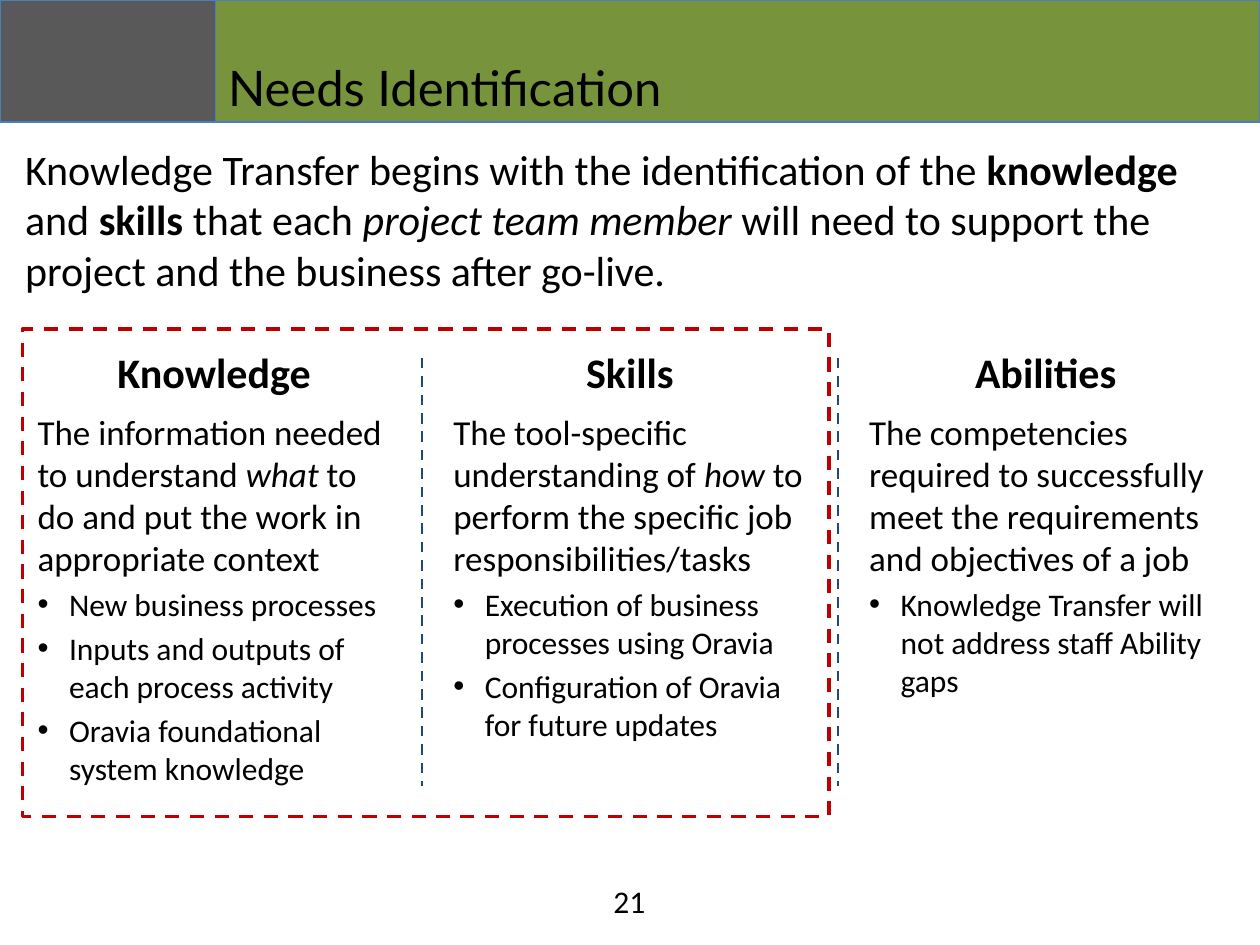
from dataclasses import dataclass

from lxml.etree import SubElement
from pptx import Presentation
from pptx.dml.color import RGBColor
from pptx.enum.dml import MSO_LINE_DASH_STYLE as Dash
from pptx.enum.shapes import MSO_CONNECTOR, MSO_SHAPE
from pptx.enum.text import MSO_ANCHOR as Anchor, PP_ALIGN as Align
from pptx.oxml.ns import qn
from pptx.util import Inches, Pt


@dataclass(frozen=True)
class Theme:
    text: str = "000000"
    tab: str = "595959"
    band: str = "77933C"
    band_line: str = "4B7EBC"
    frame: str = "C00000"
    divider: str = "1F497D"
    title_font: str = "Lato"
    body_font: str = "Calibri"
    title: int = 28
    lead: int = 24
    body: int = 20
    bullet: int = 18


THEME = Theme()
BOLD, ITALIC = {"bold": True}, {"italic": True}

TITLE = "Needs Identification"
PAGE_NUMBER = "21"
INTRO = [
    ("Knowledge Transfer begins with the identification of the ", {}),
    ("knowledge", BOLD),
    (" and ", {}),
    ("skills", BOLD),
    (" that each ", {}),
    ("project team member ", ITALIC),
    ("will need to support the project and the business after go-live.", {}),
]
COLUMNS = [
    {
        "heading": "Knowledge",
        "meaning": [
            ("The information needed to understand ", {}),
            ("what", ITALIC),
            (" to do and put the work in appropriate context", {}),
        ],
        "bullets": [
            "New business processes",
            "Inputs and outputs of each process activity",
            "Oravia foundational system knowledge",
        ],
    },
    {
        "heading": "Skills",
        "meaning": [
            ("The tool-specific understanding of ", {}),
            ("how", ITALIC),
            (" to perform the specific job responsibilities/tasks", {}),
        ],
        "bullets": [
            "Execution of business processes using Oravia",
            "Configuration of Oravia for future updates",
        ],
    },
    {
        "heading": "Abilities",
        "meaning": [
            ("The competencies required to successfully meet the "
             "requirements and objectives of a job", {}),
        ],
        "bullets": ["Knowledge Transfer will not address staff Ability gaps"],
    },
]

WIDTH, HEIGHT = 10, 7.5
BAND_HEIGHT, TAB_WIDTH = 0.97, 1.71
COLUMN_LEFT, COLUMN_WIDTH, GUTTER = 0.2, 3, 0.3
HEADING_TOP, HEADING_HEIGHT = 2.8, 0.3
DETAIL_TOP, DETAIL_HEIGHT = 3.21, 3.13
DIVIDER_TOP, DIVIDER_BOTTOM = 2.84, 6.24
FRAME = (0.18, 2.61, 6.4, 3.87)


def inches(*lengths):
    return [Inches(length) for length in lengths]


def set_all(target, values):
    for name, value in values.items():
        setattr(target, name, value)


def style_line(line, color, width, dash=None):
    line.color.rgb = RGBColor.from_string(color)
    set_all(line, {"width": Pt(width), "dash_style": dash})


def add_rectangle(page, place, line, fill=None):
    box = page.shapes.add_shape(MSO_SHAPE.RECTANGLE, *inches(*place))
    box.shadow.inherit = False
    if fill:
        box.fill.solid()
        box.fill.fore_color.rgb = RGBColor.from_string(fill)
    else:
        box.fill.background()
    style_line(box.line, *line)


def add_spans(para, spans, size, font=THEME.body_font):
    for text, emphasis in spans:
        span = para.add_run()
        span.text = text
        set_all(span.font, {"name": font, "size": Pt(size), **emphasis})
        span.font.color.rgb = RGBColor.from_string(THEME.text)


def add_text(page, place, spans, size, align=Align.LEFT, anchor=Anchor.TOP):
    frame = page.shapes.add_textbox(*inches(*place)).text_frame
    set_all(frame, {"word_wrap": True, "vertical_anchor": anchor})
    para = frame.paragraphs[0]
    para.alignment = align
    add_spans(para, spans, size)
    return frame


def add_bullet(frame, text):
    para = frame.add_paragraph()
    props = para._p.get_or_add_pPr()
    props.set("marL", str(Inches(0.25)))
    props.set("indent", str(Inches(-0.25)))
    SubElement(props, qn("a:buFont")).set("typeface", "Arial")
    SubElement(props, qn("a:buChar")).set("char", "•")
    para.space_before = Pt(0.2 * THEME.bullet)
    add_spans(para, [(text, {})], THEME.bullet)


def add_divider(page, x):
    divider = page.shapes.add_connector(
        MSO_CONNECTOR.STRAIGHT, *inches(x, DIVIDER_TOP, x, DIVIDER_BOTTOM))
    style_line(divider.line, THEME.divider, 1.5, Dash.DASH)
    SubElement(divider._element.spPr, qn("a:effectLst"))


def add_header(page):
    edge = (THEME.band_line, 0.75)
    add_rectangle(page, (0, 0, TAB_WIDTH, BAND_HEIGHT), edge, THEME.tab)
    add_rectangle(page, (TAB_WIDTH, 0, WIDTH - TAB_WIDTH, BAND_HEIGHT),
                  edge, THEME.band)
    title = page.shapes.title
    left, top, width, height = inches(TAB_WIDTH, 0, 5.21, BAND_HEIGHT)
    set_all(title, {"left": left, "top": top, "width": width, "height": height})
    title.text_frame.vertical_anchor = Anchor.BOTTOM
    para = title.text_frame.paragraphs[0]
    para.alignment = Align.LEFT
    add_spans(para, [(TITLE, {})], THEME.title, THEME.title_font)
    # Bring the title in front of the band
    page.shapes._spTree.append(title._element)


def add_column(page, index, column):
    left = COLUMN_LEFT + index * (COLUMN_WIDTH + GUTTER)
    add_text(page, (left, HEADING_TOP, COLUMN_WIDTH, HEADING_HEIGHT),
             [(column["heading"], BOLD)], THEME.lead, Align.CENTER, Anchor.MIDDLE)
    detail = add_text(page, (left, DETAIL_TOP, COLUMN_WIDTH, DETAIL_HEIGHT),
                      column["meaning"], THEME.body)
    for text in column["bullets"]:
        add_bullet(detail, text)
    if index:
        add_divider(page, left - GUTTER / 2)


def main():
    deck = Presentation()
    deck.slide_width, deck.slide_height = inches(WIDTH, HEIGHT)
    page = deck.slides.add_slide(deck.slide_layouts[5])
    add_header(page)
    add_text(page, (0.1, 1.09, 9.79, 1.4), INTRO, THEME.lead)
    add_text(page, (3.83, 6.95, 2.33, 0.4), [(PAGE_NUMBER, {})],
             THEME.bullet, Align.CENTER)
    for index, column in enumerate(COLUMNS):
        add_column(page, index, column)
    add_rectangle(page, FRAME, (THEME.frame, 2, Dash.DASH))
    deck.save("out.pptx")


if __name__ == "__main__":
    main()
